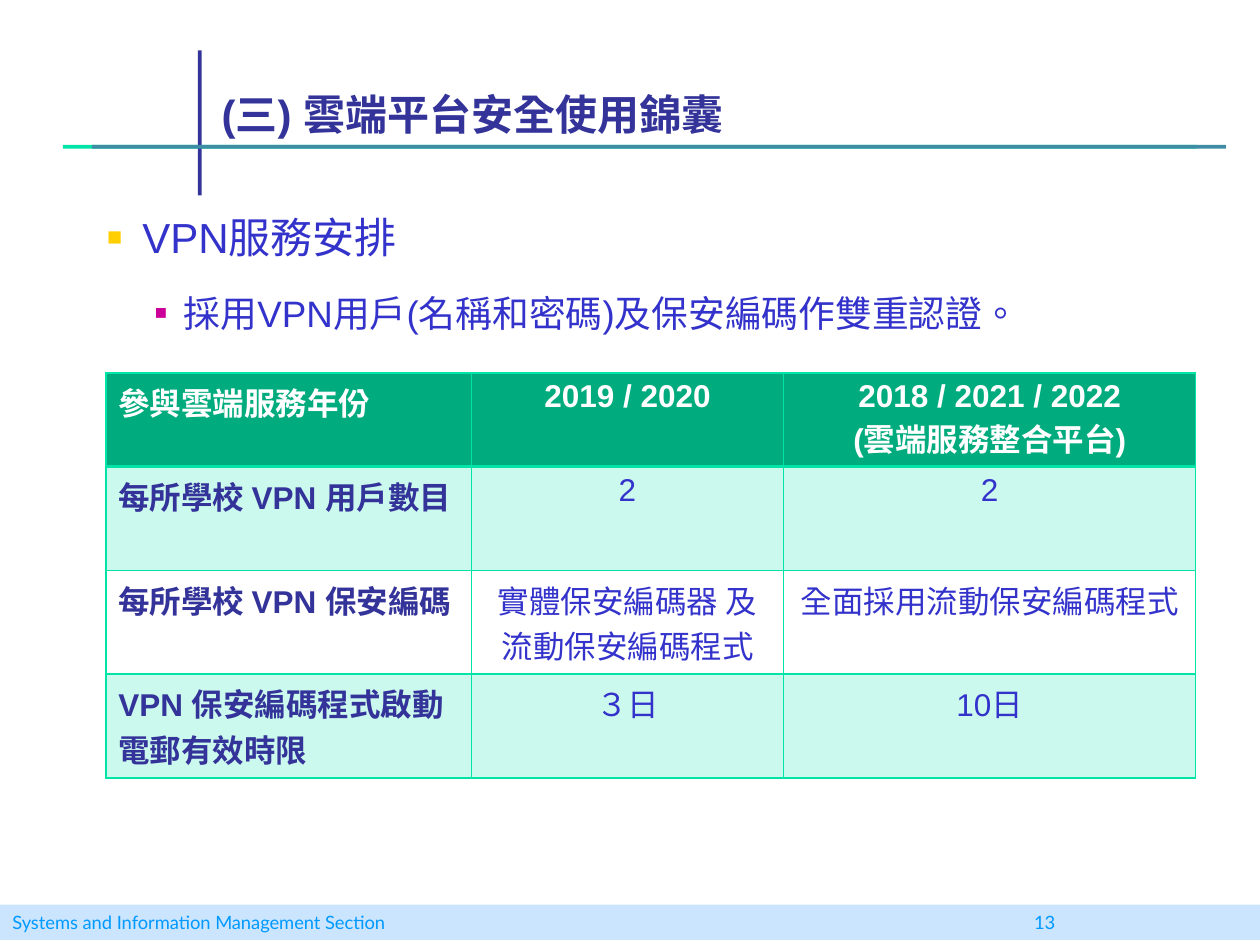
"""Build the slide on VPN arrangements for the cloud platform."""
from lxml import etree
from pptx import Presentation, util as u
from pptx.dml.color import RGBColor
from pptx.enum import lang, shapes, text
from pptx.oxml.ns import qn

W, H = 10, 7.5
COLORS = {
    "navy": "333399", "blue": "3333CC", "mint": "00E4A8", "green": "00AB7E",
    "teal": "3F8DA5", "pale": "99CCFF", "sky": "0099FF", "yellow": "FFCF01",
    "magenta": "CC0099", "white": "FFFFFF",
}
BULLETS = [
    ("VPN服務安排", 24, 0.28, 0.28, 0, 12, "yellow", 60),
    ("採用VPN用戶(名稱和密碼)及保安編碼作雙重認證。", 21, 0.61, 0.23, 4.2, 6, "magenta", 55),
]
COLUMNS = [2.9, 2.48, 3.27]
ROW_HEIGHTS = [0.42, 0.75, 0.75, 0.75]
ROWS = [
    ["參與雲端服務年份", "2019 / 2020", "2018 / 2021 / 2022\n(雲端服務整合平台)"],
    ["每所學校 VPN 用戶數目", "2", "2"],
    ["每所學校 VPN 保安編碼", "實體保安編碼器 及\n流動保安編碼程式", "全面採用流動保安編碼程式"],
    ["VPN 保安編碼程式啟動電郵有效時限", "３日", "10日"],
]


def rgb(name):
    return RGBColor.from_string(COLORS[name])


def element(parent, tag, **attrs):
    return etree.SubElement(parent, qn(tag), **{k: str(v) for k, v in attrs.items()})


def place(sp, left, top, width, height):
    sp.left, sp.top, sp.width, sp.height = map(u.Inches, (left, top, width, height))


def set_font(p, size, color, bold=False, name="Arial"):
    f = p.font
    f.size, f.name, f.bold = u.Pt(size), name, bold
    f.color.rgb = rgb(color)
    for r in p.runs:
        r.font.language_id = lang.MSO_LANGUAGE_ID.TRADITIONAL_CHINESE


def set_fill(fill, color, opacity=100):
    fill.solid()
    fill.fore_color.rgb = rgb(color)
    if opacity < 100:
        clr = fill._xPr.find(qn("a:solidFill")).find(qn("a:srgbClr"))
        element(clr, "a:alpha", val=opacity * 1000)


def add_bar(s, left, top, width, height, color, opacity=100):
    sp = s.shapes.add_shape(shapes.MSO_SHAPE.RECTANGLE, *map(u.Inches, (left, top, width, height)))
    sp.shadow.inherit = False
    sp.line.fill.background()
    set_fill(sp.fill, color, opacity)
    return sp


def add_footer(s):
    tf = add_bar(s, 0, 7.18, W, 0.28, "pale", 50).text_frame
    tf.vertical_anchor = text.MSO_ANCHOR.MIDDLE
    tf.margin_top = tf.margin_bottom = 0
    p = tf.paragraphs[0]
    p.text = "Systems and Information Management Section\t13"
    p.alignment = text.PP_ALIGN.LEFT
    tabs = element(p._p.get_or_add_pPr(), "a:tabLst")
    element(tabs, "a:tab", pos=u.Inches(8.11), algn="l")
    set_font(p, 10.5, "sky", name="Lato")


def fill_title(sp):
    place(sp, 1.66, 0.32, 7.83, 0.83)
    tf = sp.text_frame
    tf.text = "(三) 雲端平台安全使用錦囊"
    tf.vertical_anchor = text.MSO_ANCHOR.BOTTOM
    tf.auto_size = text.MSO_AUTO_SIZE.NONE
    p = tf.paragraphs[0]
    p.alignment = text.PP_ALIGN.LEFT
    set_font(p, 24, "navy", True)


def fill_body(sp):
    place(sp, 0.75, 1.63, 8.83, 5.04)
    tf = sp.text_frame
    tf.auto_size = text.MSO_AUTO_SIZE.NONE
    tf.text = "\n".join(b[0] for b in BULLETS)
    for level, (p, bullet) in enumerate(zip(tf.paragraphs, BULLETS)):
        _, size, margin, hang, before, after, color, share = bullet
        p.level, p.alignment = level, text.PP_ALIGN.JUSTIFY
        p.space_before, p.space_after = u.Pt(before), u.Pt(after)
        pPr = p._p.get_or_add_pPr()
        pPr.set("marL", str(u.Inches(margin)))
        pPr.set("indent", str(-u.Inches(hang)))
        element(element(pPr, "a:buClr"), "a:srgbClr", val=COLORS[color])
        element(pPr, "a:buSzPct", val=share * 1000)
        element(pPr, "a:buFont", typeface="Arial")
        element(pPr, "a:buChar", char="■")
        set_font(p, size, "blue")


def set_borders(cell, bottom):
    tcPr = cell._tc.get_or_add_tcPr()
    for i, (side, width) in enumerate(zip("LRTB", (1, 1, 1, bottom))):
        ln = element(tcPr, f"a:ln{side}", w=u.Pt(width))
        element(element(ln, "a:solidFill"), "a:srgbClr", val=COLORS["mint"])
        tcPr.insert(i, ln)


def fill_cell(cell, words, row, col):
    header, label = row == 0, col == 0
    cell.text = words
    for p in cell.text_frame.paragraphs:
        p.alignment = text.PP_ALIGN.LEFT if label else text.PP_ALIGN.CENTER
        set_font(p, 18, "white" if header else "navy" if label else "blue", header or label)
    if header:
        set_fill(cell.fill, "green")
    elif row % 2:
        set_fill(cell.fill, "mint", 20)
    else:
        cell.fill.background()
    set_borders(cell, 2 if header else 1)


def add_vpn_table(s):
    box = map(u.Inches, (0.84, 2.96, sum(COLUMNS), sum(ROW_HEIGHTS)))
    table = s.shapes.add_table(len(ROWS), len(COLUMNS), *box).table
    table.first_row = table.horz_banding = False
    for column, width in zip(table.columns, COLUMNS):
        column.width = u.Inches(width)
    for i, (height, row) in enumerate(zip(ROW_HEIGHTS, ROWS)):
        table.rows[i].height = u.Inches(height)
        for j, words in enumerate(row):
            fill_cell(table.cell(i, j), words, i, j)


def main():
    prs = Presentation()
    prs.slide_width, prs.slide_height = u.Inches(W), u.Inches(H)
    s = prs.slides.add_slide(prs.slide_layouts[1])
    add_bar(s, 0.5, 1.15, 9, 0.03, "mint")
    add_bar(s, 1.57, 0.4, 0.03, 1.15, "navy")
    add_bar(s, 0.73, 1.15, 9, 0.03, "teal")
    add_footer(s)
    fill_title(s.shapes.title)
    fill_body(s.placeholders[1])
    add_vpn_table(s)
    prs.save("out.pptx")


if __name__ == "__main__":
    main()
